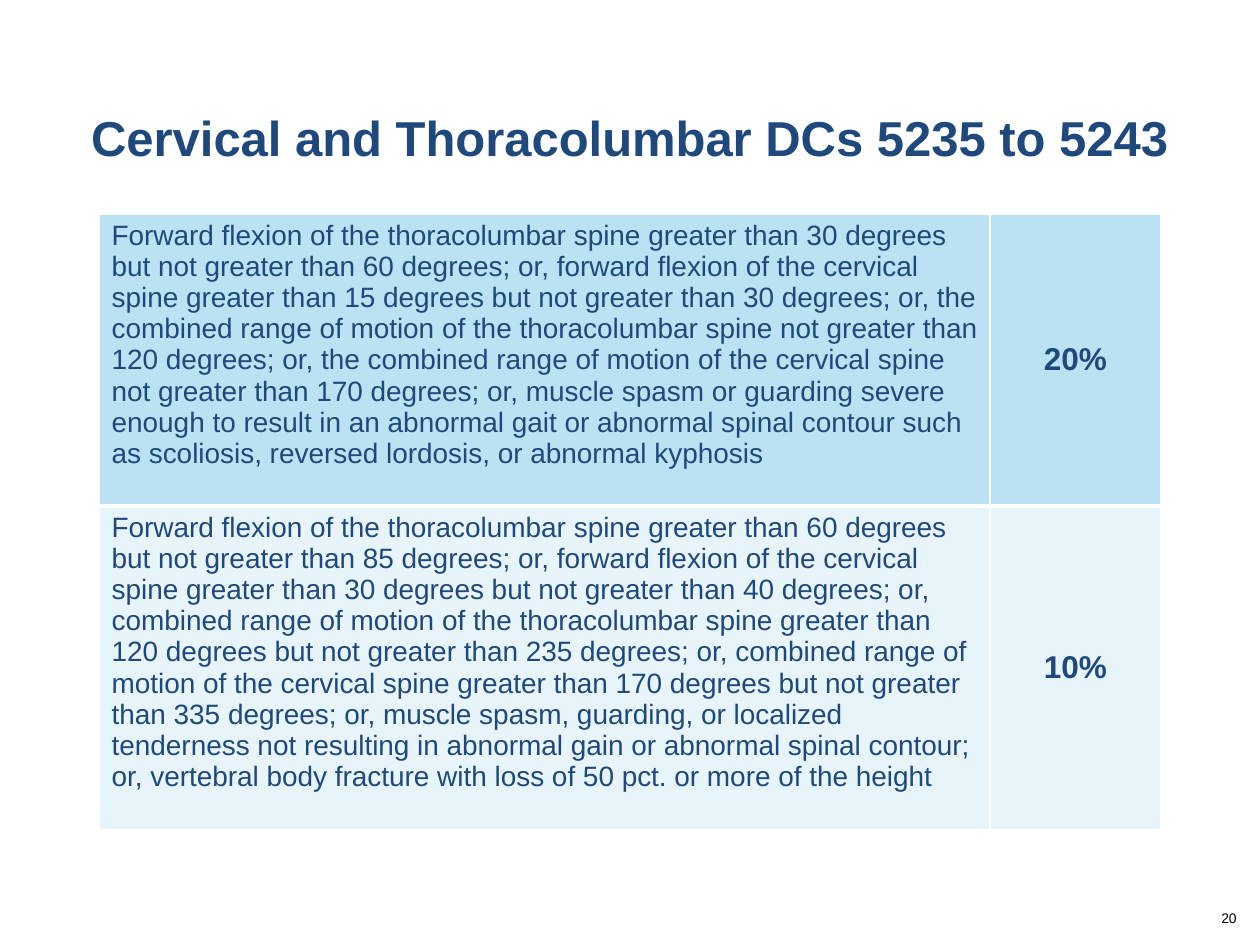
from dataclasses import dataclass

from lxml.etree import SubElement
from pptx import Presentation
from pptx.dml.color import RGBColor
from pptx.enum.text import MSO_ANCHOR, PP_ALIGN
from pptx.oxml.ns import qn
from pptx.util import Pt

EMU_PER_PX = 914400 / 126


@dataclass(frozen=True)
class Theme:
    """Colours, font and type sizes of the slide."""
    font: str = "Arial"
    navy: str = "1F497D"
    black: str = "000000"
    white: str = "FFFFFF"
    row_fills: tuple = ("BBE2F2", "E7F4FA")
    title_size: float = 28
    criteria_size: float = 16
    rating_size: float = 18
    number_size: float = 7.9
    thin_line: float = 1
    thick_line: float = 3


THEME = Theme()
RATINGS = [
    (
        "Forward flexion of the thoracolumbar spine greater than 30 degrees but not greater "
        "than 60 degrees; or, forward flexion of the cervical spine greater than 15 degrees but "
        "not greater than 30 degrees; or, the combined range of motion of the thoracolumbar "
        "spine not greater than 120 degrees; or, the combined range of motion of the cervical "
        "spine not greater than 170 degrees; or, muscle spasm or guarding severe enough to "
        "result in an abnormal gait or abnormal spinal contour such as scoliosis, reversed "
        "lordosis, or abnormal kyphosis",
        "20%",
    ),
    (
        "Forward flexion of the thoracolumbar spine greater than 60 degrees but not greater "
        "than 85 degrees; or, forward flexion of the cervical spine greater than 30 degrees but "
        "not greater than 40 degrees; or, combined range of motion of the thoracolumbar spine "
        "greater than 120 degrees but not greater than 235 degrees; or, combined range of motion "
        "of the cervical spine greater than 170 degrees but not greater than 335 degrees; or, "
        "muscle spasm, guarding, or localized tenderness not resulting in abnormal gain or "
        "abnormal spinal contour; or, vertebral body fracture with loss of 50 pct. or more of "
        "the height",
        "10%",
    ),
]


def px(length):
    """Turn pixels into EMU."""
    return round(length * EMU_PER_PX)


def write_text(text_frame, text, size, color, alignment, bold=False):
    """Write one styled run into the first paragraph of a text frame."""
    paragraph = text_frame.paragraphs[0]
    paragraph.alignment = alignment
    run = paragraph.add_run()
    run.text = text
    run.font.name = THEME.font
    run.font.size = Pt(size)
    run.font.bold = bold
    run.font.color.rgb = RGBColor.from_string(color)


def add_label(slide, box, anchor):
    """Add an empty wrapping text box and return its text frame."""
    text_frame = slide.shapes.add_textbox(*map(px, box)).text_frame
    text_frame.word_wrap = True
    text_frame.vertical_anchor = anchor
    return text_frame


def add_title(slide, box, text):
    """Place the centred slide title."""
    text_frame = add_label(slide, box, MSO_ANCHOR.MIDDLE)
    write_text(text_frame, text, THEME.title_size, THEME.navy, PP_ALIGN.CENTER, bold=True)


def add_slide_number(slide, box, text):
    """Place the slide number at the right of its box."""
    text_frame = add_label(slide, box, MSO_ANCHOR.TOP)
    text_frame.margin_top = 0
    write_text(text_frame, text, THEME.number_size, THEME.black, PP_ALIGN.RIGHT)


def set_borders(cell, top, bottom):
    """Draw white borders, with thin sides, around a cell."""
    properties = cell._tc.get_or_add_tcPr()
    widths = {"lnL": THEME.thin_line, "lnR": THEME.thin_line, "lnT": top, "lnB": bottom}
    for tag, width in widths.items():
        line = SubElement(properties, qn(f"a:{tag}"), w=str(Pt(width)))
        fill = SubElement(line, qn("a:solidFill"))
        SubElement(fill, qn("a:srgbClr"), val=THEME.white)


def add_rating_table(slide, box, rating_width, row_heights):
    """Place the table of criteria and their ratings."""
    width = box[2]
    table = slide.shapes.add_table(len(RATINGS), 2, *map(px, box)).table
    table.first_row = False
    table.horz_banding = False
    for column, column_width in zip(table.columns, (width - rating_width, rating_width)):
        column.width = px(column_width)
    last = len(RATINGS) - 1
    for index, (criteria, rating) in enumerate(RATINGS):
        table.rows[index].height = px(row_heights[index])
        top = THEME.thick_line if index > 0 else THEME.thin_line
        bottom = THEME.thick_line if index < last else THEME.thin_line
        criteria_cell, rating_cell = table.rows[index].cells
        for cell in (criteria_cell, rating_cell):
            set_borders(cell, top, bottom)
            cell.fill.solid()
            cell.fill.fore_color.rgb = RGBColor.from_string(THEME.row_fills[index])
        criteria_cell.vertical_anchor = MSO_ANCHOR.TOP
        criteria_cell.margin_right = px(9)
        rating_cell.vertical_anchor = MSO_ANCHOR.MIDDLE
        write_text(criteria_cell.text_frame, criteria, THEME.criteria_size, THEME.navy, PP_ALIGN.LEFT)
        write_text(rating_cell.text_frame, rating, THEME.rating_size, THEME.navy, PP_ALIGN.CENTER, bold=True)


def main():
    """Build and save the slide."""
    presentation = Presentation()
    presentation.slide_width = px(1260)
    presentation.slide_height = px(945)
    slide = presentation.slides.add_slide(presentation.slide_layouts[6])
    add_title(slide, (10, 63, 1239, 147), "Cervical and Thoracolumbar DCs 5235 to 5243")
    add_slide_number(slide, (955, 910, 294, 50), "20")
    add_rating_table(slide, (99, 214, 1062, 616), 171, (292, 324))
    presentation.save("out.pptx")


if __name__ == "__main__":
    main()
